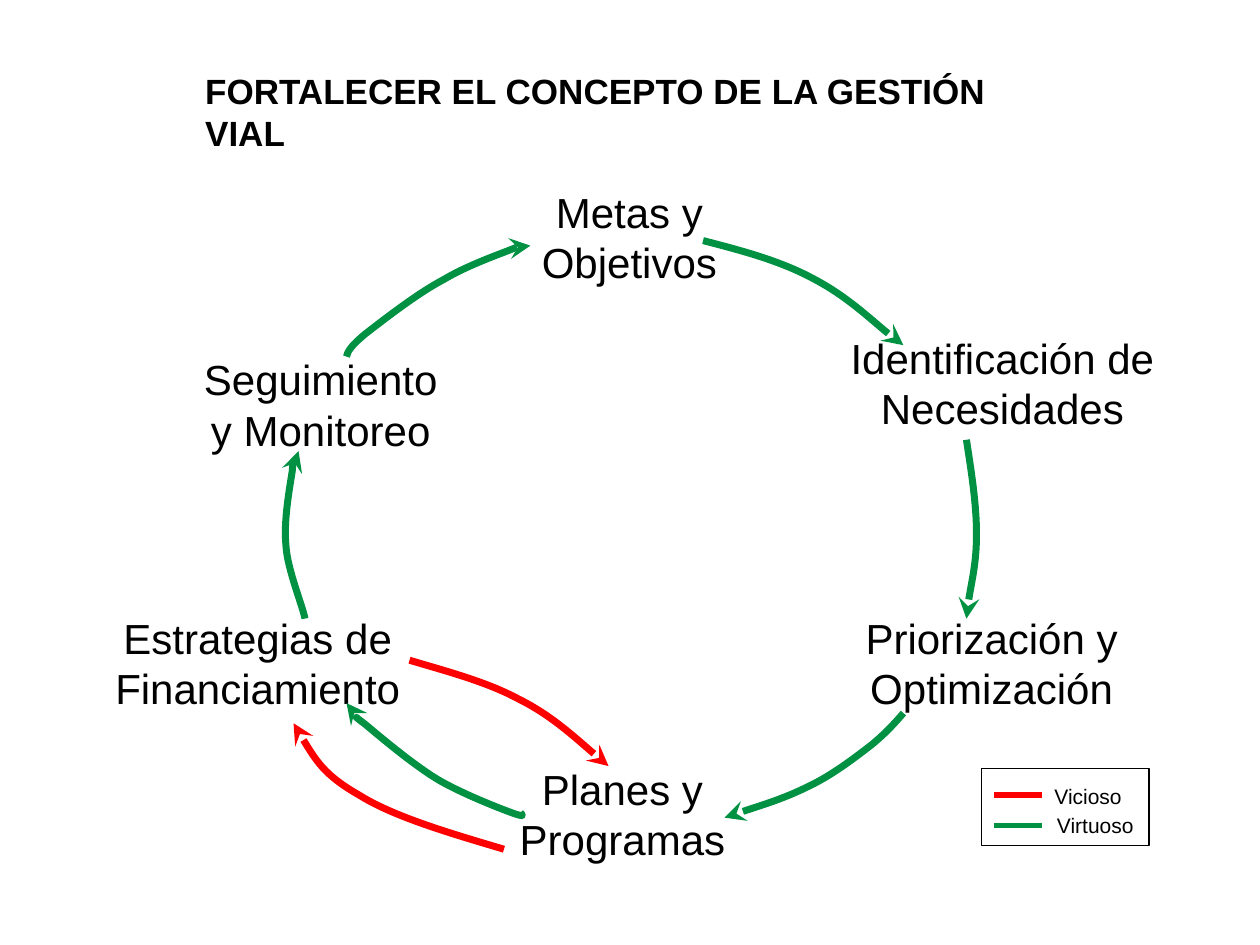
import pptx
import pptx.dml.color
import pptx.enum.shapes
import pptx.enum.text
import pptx.util
from lxml import etree

BLACK = pptx.dml.color.RGBColor(0x00, 0x00, 0x00)
WHITE = pptx.dml.color.RGBColor(0xFF, 0xFF, 0xFF)
VIRTUOUS = pptx.dml.color.RGBColor(0x00, 0x92, 0x42)
VICIOUS = pptx.dml.color.RGBColor(0xFF, 0x00, 0x00)
DRAWING = "{http://schemas.openxmlformats.org/drawingml/2006/main}"

deck = pptx.Presentation()
deck.slide_width = pptx.util.Inches(10)
deck.slide_height = pptx.util.Inches(7.5)
slide = deck.slides.add_slide(deck.slide_layouts[6])

# The slide is a grid of 100 columns by 75 rows
COLUMN = deck.slide_width / 100
ROW = deck.slide_height / 75


def grid(*values):
    """Turn alternating columns and rows into slide lengths."""
    return [round(value * (ROW if i % 2 else COLUMN)) for i, value in enumerate(values)]


def add_text(text, place, size=24, bold=False, fill=None, wrap=True,
             align=pptx.enum.text.PP_ALIGN.LEFT):
    box = slide.shapes.add_textbox(*grid(*place))
    if fill is not None:
        box.fill.solid()
        box.fill.fore_color.rgb = fill
    box.text_frame.word_wrap = wrap
    paragraph = box.text_frame.paragraphs[0]
    paragraph.text = text
    paragraph.alignment = align
    paragraph.font.name = "Arial"
    paragraph.font.size = pptx.util.Pt(size)
    paragraph.font.bold = bold
    paragraph.font.color.rgb = BLACK


# Stages of the cycle
STAGE_HEIGHT = 9.1
stages = [
    ("Planes y Programas", 39.2, 60.1, 20.4),
    ("Metas y Objetivos", 41.2, 14.3, 17.5),
    ("Identificación de Necesidades", 65.8, 25.9, 27.5),
    ("Priorización y Optimización", 65.8, 48.1, 25.8),
    ("Estrategias de Financiamiento", 6.7, 48.1, 27.5),
    ("Seguimiento y Monitoreo", 14.2, 27.6, 22.5),
]
for stage, left, top, width in stages:
    add_text(stage, (left, top, width, STAGE_HEIGHT), fill=WHITE,
             align=pptx.enum.text.PP_ALIGN.CENTER)

# Curved arrows: a start, then two control points and an end for each stretch
arrows = [
    # Priorización to Planes
    (VIRTUOUS, [(71.7, 56.6), (71, 57.4), (70.4, 58.1), (69.2, 59.1), (67.9, 60.1),
                (66.1, 61.5), (64.2, 62.4), (62.2, 63.4), (58.9, 64.4), (57.5, 64.9)]),
    # Planes to Estrategias
    (VIRTUOUS, [(41.3, 64.5), (41.5, 64.7), (41.7, 64.9), (40.6, 64.5), (39.5, 64.1),
                (36.7, 63), (34.8, 61.9), (32.8, 60.7), (30.2, 58.5), (29, 57.5),
                (27.7, 56.5), (27.6, 56.1), (27.5, 55.8)]),
    # Seguimiento to Metas
    (VIRTUOUS, [(27.5, 28.3), (27.6, 27.9), (27.8, 27.5), (29, 26.5), (30.3, 25.5),
                (33.1, 23.3), (35.2, 22.2), (37.2, 21), (40.2, 20), (41.3, 19.5),
                (42.5, 19.1), (42.3, 19.3), (42.1, 19.5)]),
    # Metas to Identificación
    (VIRTUOUS, [(55.8, 19.1), (58.9, 19.9), (61.9, 20.7), (64.5, 22.1),
                (67.2, 23.5), (70.6, 26.7), (71.7, 27.4)]),
    # Identificación to Priorización
    (VIRTUOUS, [(76.7, 34.9), (77.1, 37.5), (77.5, 40), (77.5, 42.4),
                (77.5, 44.7), (76.7, 48.1), (76.7, 49.1)]),
    # Estrategias to Seguimiento
    (VIRTUOUS, [(24.2, 49.1), (24.1, 48.3), (22.8, 45.2), (22.7, 43.3), (22.5, 41.3),
                (23, 38.7), (23.2, 37.4), (23.3, 36.2), (23.5, 36), (23.7, 35.8)]),
    # Estrategias to Planes
    (VICIOUS, [(32.5, 52.4), (35.5, 53.3), (38.6, 54.1), (41.2, 55.5),
               (43.8, 56.8), (47.3, 60), (48.3, 60.8)]),
    # Planes back to Estrategias
    (VICIOUS, [(40, 67.4), (35.6, 66.1), (31.2, 64.8), (28.5, 63.1),
               (25.7, 61.5), (24.5, 59.5), (23.3, 57.4)]),
]
for color, points in arrows:
    start, *bends = [grid(*point) for point in points]
    builder = slide.shapes.build_freeform(*start)
    builder.add_line_segments(bends, close=False)
    arrow = builder.convert_to_shape()
    arrow.shadow.inherit = False
    arrow.fill.background()
    arrow.line.color.rgb = color
    arrow.line.width = pptx.util.Pt(4)
    # Every three straight segments become one Bézier stretch
    outline = next(arrow.element.iter(DRAWING + "path"))
    segments = outline.findall(DRAWING + "lnTo")
    for i in range(0, len(segments), 3):
        curve = etree.SubElement(outline, DRAWING + "cubicBezTo")
        for segment in segments[i:i + 3]:
            curve.append(segment[0])
            outline.remove(segment)
    etree.SubElement(arrow.line._get_or_add_ln(), DRAWING + "tailEnd", type="stealth")

# Legend
legend = [("Vicioso", VICIOUS, 63.1, (82.7, 61.7, 8.5, 3)),
          ("Virtuoso", VIRTUOUS, 65.5, (82.9, 64, 8.2, 3))]
for name, color, row, place in legend:
    sample = slide.shapes.add_connector(
        pptx.enum.shapes.MSO_CONNECTOR.STRAIGHT, *grid(78.9, row, 82.7, row))
    sample.line.color.rgb = color
    sample.line.width = pptx.util.Pt(3)
    etree.SubElement(sample.element.spPr, DRAWING + "effectLst")
    add_text(name, place, size=12, wrap=False)

legend_frame = slide.shapes.add_shape(
    pptx.enum.shapes.MSO_SHAPE.RECTANGLE, *grid(77.9, 61, 13.3, 6.1))
legend_frame.shadow.inherit = False
legend_frame.fill.background()
legend_frame.line.color.rgb = BLACK
legend_frame.line.width = pptx.util.Pt(0.75)

# Title
add_text("FORTALECER EL CONCEPTO DE LA GESTIÓN VIAL", (15.3, 5, 66.1, 7.7),
         size=20, bold=True)

deck.save("out.pptx")
